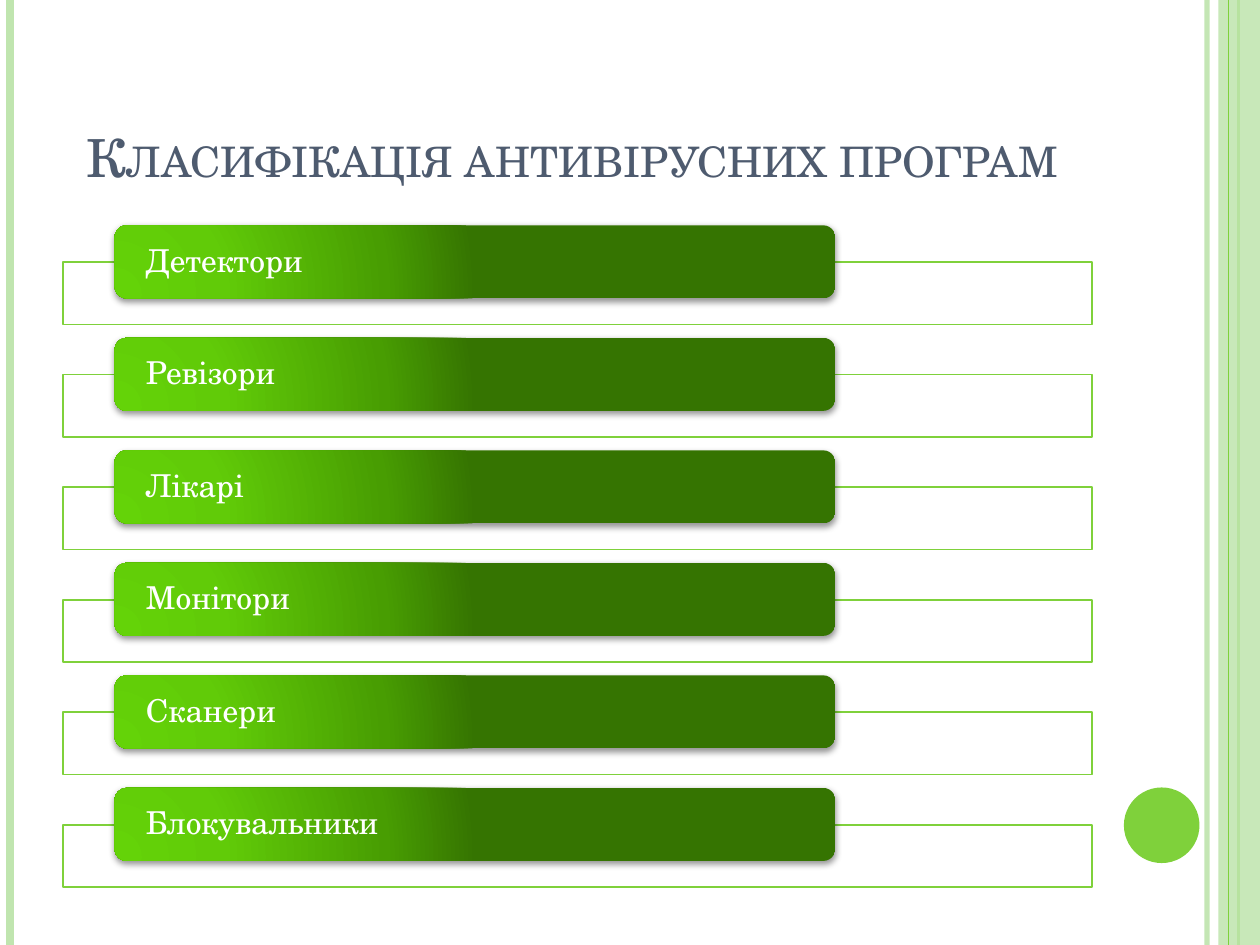
import lxml.etree
import pptx
import pptx.dml.color
import pptx.enum.shapes
import pptx.enum.text
import pptx.oxml
import pptx.oxml.ns
import pptx.util

RGBColor = pptx.dml.color.RGBColor
Shape = pptx.enum.shapes.MSO_SHAPE
Anchor = pptx.enum.text.MSO_ANCHOR
Align = pptx.enum.text.PP_ALIGN
Pt = pptx.util.Pt
qn = pptx.oxml.ns.qn

WHITE = RGBColor(0xFF, 0xFF, 0xFF)
GREEN = RGBColor(0x7F, 0xD1, 0x3B)
PALE_GREEN = RGBColor(0xC0, 0xE5, 0xAF)
SLATE = RGBColor(0x4E, 0x5B, 0x6F)
SHADOW = RGBColor(0x00, 0x00, 0x00)
PILL_STOPS = (
    (0, RGBColor(0x64, 0xD3, 0x08)),
    (30, RGBColor(0x61, 0xCB, 0x08)),
    (75, RGBColor(0x48, 0x9D, 0x02)),
    (100, RGBColor(0x35, 0x74, 0x01)),
)

COLUMNS, ROWS = 100, 75
CATEGORIES = ("Детектори", "Ревізори", "Лікарі", "Монітори", "Сканери", "Блокувальники")
FIRST_PILL_ROW, CATEGORY_STEP, FRAME_DROP = 17.88, 8.93, 2.92


class SlideBuilder:
    font_name = "TeX Gyre Schola"

    def __init__(self, presentation):
        self.cell_width = presentation.slide_width / COLUMNS
        self.cell_height = presentation.slide_height / ROWS
        self.slide = presentation.slides.add_slide(presentation.slide_layouts[6])
        self.shapes = self.slide.shapes

    def start_group(self):
        self.shapes = self.slide.shapes.add_group_shape().shapes

    def place(self, column, row, width, height):
        return (
            round(column * self.cell_width),
            round(row * self.cell_height),
            round(width * self.cell_width),
            round(height * self.cell_height),
        )

    def apply(self, target, formats):
        for name, value in formats.items():
            setattr(target, name, value)

    def set_alpha(self, properties, percent):
        color = properties.find(".//" + qn("a:srgbClr"))
        lxml.etree.SubElement(color, qn("a:alpha"), val=str(percent * 1000))

    def rule(self, column, color, weight, opacity=100):
        x, top, _, height = self.place(column, 0, 0, ROWS)
        stripe = self.shapes.add_connector(
            pptx.enum.shapes.MSO_CONNECTOR.STRAIGHT, x, top, x, top + height
        )
        stripe.line.color.rgb = color
        stripe.line.width = Pt(weight)
        properties = stripe._element.spPr
        self.set_alpha(properties, opacity)
        lxml.etree.SubElement(properties, qn("a:effectLst"))

    def block(self, kind, area, fill, opacity=100, outline=None):
        block = self.shapes.add_shape(kind, *self.place(*area))
        block.shadow.inherit = False
        block.fill.solid()
        block.fill.fore_color.rgb = fill
        self.set_alpha(block._element.spPr, opacity)
        if outline is None:
            block.line.fill.background()
        else:
            block.line.color.rgb = outline
            block.line.width = Pt(1)
        return block

    def label(self, holder, text, color, frame_formats, paragraph_formats, font_formats):
        frame = holder.text_frame
        frame.text = text
        paragraph = frame.paragraphs[0]
        font = paragraph.runs[0].font
        self.apply(frame, {"word_wrap": True, **frame_formats})
        self.apply(paragraph, {"alignment": Align.LEFT, **paragraph_formats})
        self.apply(font, {"name": self.font_name, **font_formats})
        font.color.rgb = color
        return font

    def title(self, text, area):
        heading = self.shapes.add_textbox(*self.place(*area))
        font = self.label(
            heading, text, SLATE, {"vertical_anchor": Anchor.BOTTOM}, {}, {"size": Pt(30)}
        )
        font._element.set("cap", "small")

    def pill(self, text, area):
        pill = self.block(Shape.ROUNDED_RECTANGLE, area, GREEN)
        properties = pill._element.spPr
        namespace = pptx.oxml.ns.nsdecls("a")
        stops = "".join(
            f'<a:gs pos="{share * 1000}"><a:srgbClr val="{color}"/></a:gs>'
            for share, color in PILL_STOPS
        )
        gradient = pptx.oxml.parse_xml(
            f'<a:gradFill {namespace} rotWithShape="1"><a:gsLst>{stops}</a:gsLst>'
            '<a:path path="circle"><a:fillToRect l="5000" t="100000" r="120000" b="10000"/>'
            "</a:path></a:gradFill>"
        )
        properties.replace(properties.find(qn("a:solidFill")), gradient)
        effects = pptx.oxml.parse_xml(
            f'<a:effectLst {namespace}><a:outerShdw blurRad="{Pt(4)}" dist="{Pt(1.6)}" '
            f'dir="5400000" rotWithShape="0"><a:srgbClr val="{SHADOW}"><a:alpha val="42000"/>'
            "</a:srgbClr></a:outerShdw></a:effectLst>"
        )
        properties.replace(properties.find(qn("a:effectLst")), effects)
        inset = round(2.2 * self.cell_width)
        self.label(
            pill,
            text,
            WHITE,
            {
                "vertical_anchor": Anchor.MIDDLE,
                "margin_left": inset,
                "margin_right": inset,
                "margin_top": 0,
                "margin_bottom": 0,
            },
            {"line_spacing": 0.9},
            {"size": Pt(18)},
        )


def main():
    presentation = pptx.Presentation()
    presentation.slide_width = pptx.util.Inches(10)
    presentation.slide_height = pptx.util.Inches(7.5)
    builder = SlideBuilder(presentation)

    builder.rule(95.8, PALE_GREEN, 3, 93)
    builder.rule(0.8, PALE_GREEN, 4.5)
    builder.rule(98.3, GREEN, 1.5)
    builder.block(Shape.RECTANGLE, (96.7, 0, 3.3, ROWS), PALE_GREEN, 87)
    builder.rule(97.5, GREEN, 0.75)
    builder.block(Shape.OVAL, (89.2, 62.5, 6, 6), GREEN)
    builder.title("Класифікація антивірусних програм", (5.9, 2.9, 81.7, 12.5))

    builder.start_group()
    for index, category in enumerate(CATEGORIES):
        row = FIRST_PILL_ROW + index * CATEGORY_STEP
        builder.block(Shape.RECTANGLE, (5, row + FRAME_DROP, 81.7, 4.95), WHITE, 90, GREEN)
        builder.pill(category, (9.1, row, 57.2, 5.8))

    presentation.save("out.pptx")


if __name__ == "__main__":
    main()
